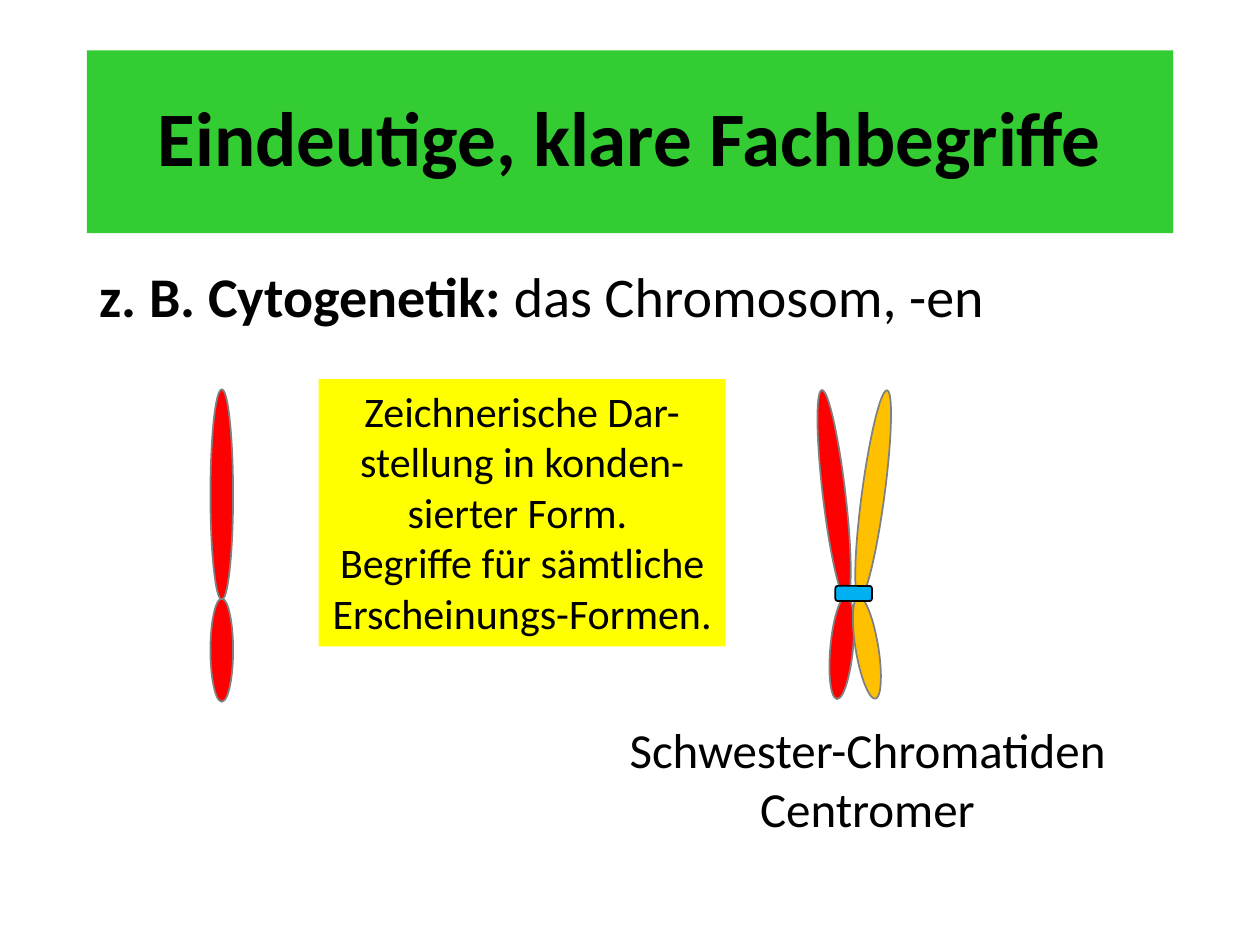
from pptx import Presentation
from pptx.dml.color import RGBColor
from pptx.enum.shapes import MSO_SHAPE
from pptx.enum.text import MSO_ANCHOR, MSO_AUTO_SIZE, PP_ALIGN
from pptx.util import Inches, Pt

COLORS = {
    "title": "33CC33", "note": "FFFF00", "first": "FF0000", "sister": "FFC000",
    "centromere": "00B0F0", "outline": "808080", "black": "000000",
}


def write_text(shape, paragraphs, size, align=PP_ALIGN.LEFT, anchor=MSO_ANCHOR.TOP, spacing=1.0):
    frame = shape.text_frame
    frame.word_wrap = True
    frame.auto_size = MSO_AUTO_SIZE.NONE
    frame.vertical_anchor = anchor
    for index, runs in enumerate(paragraphs):
        paragraph = frame.add_paragraph() if index else frame.paragraphs[0]
        paragraph.alignment = align
        paragraph.line_spacing = spacing
        for text, bold in runs:
            run = paragraph.add_run()
            run.text = text
            run.font.name = "Calibri"
            run.font.size = Pt(size)
            run.font.bold = bold
            run.font.color.rgb = RGBColor.from_string(COLORS["black"])


def add_part(kind, left, top, width, height, fill, line=None, rotation=0):
    shape = slide.shapes.add_shape(kind, Inches(left), Inches(top), Inches(width), Inches(height))
    shape.shadow.inherit = False
    shape.rotation = rotation
    shape.fill.solid()
    shape.fill.fore_color.rgb = RGBColor.from_string(COLORS[fill])
    if line:
        shape.line.color.rgb = RGBColor.from_string(COLORS[line])
        shape.line.width = Pt(1)
    else:
        shape.line.fill.background()
    return shape


presentation = Presentation()
presentation.slide_width = Inches(10)
presentation.slide_height = Inches(7.5)
slide = presentation.slides.add_slide(presentation.slide_layouts[5])

title = slide.shapes.title
title.left, title.top = Inches(0.69), Inches(0.4)
title.width, title.height = Inches(8.62), Inches(1.45)
title.fill.solid()
title.fill.fore_color.rgb = RGBColor.from_string(COLORS["title"])
write_text(title, [[("Eindeutige, klare Fachbegriffe", True)]], size=44,
           align=PP_ALIGN.CENTER, anchor=MSO_ANCHOR.MIDDLE, spacing=0.9)

example = slide.shapes.add_textbox(Inches(0.69), Inches(2.03), Inches(8.62), Inches(1.18))
write_text(example, [[("z. B. Cytogenetik: ", True), ("das Chromosom, -en", False)]], size=32)

LONG_ARM, SHORT_ARM = 1.67, 0.82
chromatid_arms = [
    (1.67, 3.09, LONG_ARM, "first", 0),
    (1.67, 4.75, SHORT_ARM, "first", 0),
    (6.53, 3.09, LONG_ARM, "first", 353.3),
    (6.59, 4.73, SHORT_ARM, "first", 5.3),
    (6.84, 3.09, LONG_ARM, "sister", 7.6),
    (6.79, 4.73, SHORT_ARM, "sister", 350.6),
]
for left, top, length, fill, rotation in chromatid_arms:
    add_part(MSO_SHAPE.OVAL, left, top, 0.18, length, fill, "outline", rotation)
add_part(MSO_SHAPE.ROUNDED_RECTANGLE, 6.63, 4.65, 0.29, 0.12, "centromere", "black")

caption = slide.shapes.add_textbox(Inches(4.52), Inches(5.66), Inches(4.73), Inches(1.04))
write_text(caption, [[("Schwester-Chromatiden", False)], [("Centromer", False)]],
           size=28, align=PP_ALIGN.CENTER)

note = add_part(MSO_SHAPE.RECTANGLE, 2.53, 3.01, 3.23, 2.12, "note")
write_text(note, [
    [("Zeichnerische Dar-stellung in konden-sierter Form. ", False)],
    [("Begriffe für sämtliche Erscheinungs-Formen.", False)],
], size=24, align=PP_ALIGN.CENTER)

presentation.save("out.pptx")
